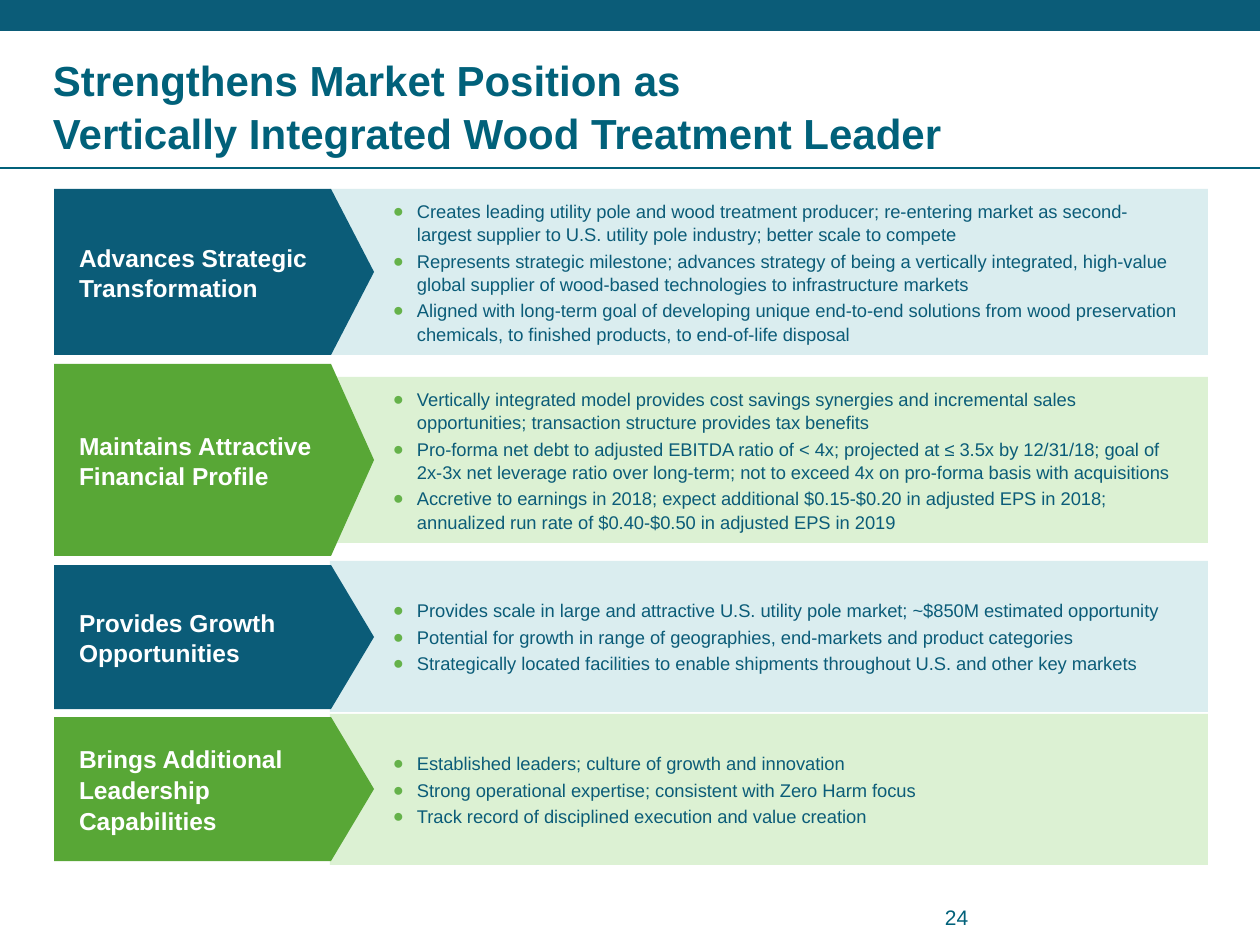
"""Build a slide of four strategic benefits, each an arrow label with a bulleted panel."""
from lxml import etree
from pptx import Presentation
from pptx import util as u
from pptx.dml.color import RGBColor
from pptx.enum import shapes, text
from pptx.oxml.ns import qn

SCALE = 914400 / 126
HUES = {"navy": "0B5C78", "teal": "01617A", "green": "58A736", "dot": "65B24A",
        "sky": "DAEDEF", "mint": "DCF1D3", "white": "FFFFFF"}
ROWS = [
    ("Advances Strategic Transformation", "navy", "sky", (189, 166), (189, 166), [
        "Creates leading utility pole and wood treatment producer; re-entering market as second-largest supplier to U.S. utility pole industry; better scale to compete",
        "Represents strategic milestone; advances strategy of being a vertically integrated, high-value global supplier of wood-based technologies to infrastructure markets",
        "Aligned with long-term goal of developing unique end-to-end solutions from wood preservation chemicals, to finished products, to end-of-life disposal"]),
    ("Maintains Attractive Financial Profile", "green", "mint", (364, 192), (377, 166), [
        "Vertically integrated model provides cost savings synergies and incremental sales opportunities; transaction structure provides tax benefits",
        "Pro-forma net debt to adjusted EBITDA ratio of < 4x; projected at ≤ 3.5x by 12/31/18; goal of 2x-3x net leverage ratio over long-term; not to exceed 4x on pro-forma basis with acquisitions",
        "Accretive to earnings in 2018; expect additional $0.15-$0.20 in adjusted EPS in 2018; annualized run rate of $0.40-$0.50 in adjusted EPS in 2019"]),
    ("Provides Growth Opportunities", "navy", "sky", (565, 144), (561, 151), [
        "Provides scale in large and attractive U.S. utility pole market; ~$850M estimated opportunity",
        "Potential for growth in range of geographies, end-markets and product categories",
        "Strategically located facilities to enable shipments throughout U.S. and other key markets"]),
    ("Brings Additional Leadership Capabilities", "green", "mint", (717, 144), (714, 151), [
        "Established leaders; culture of growth and innovation",
        "Strong operational expertise; consistent with Zero Harm focus",
        "Track record of disciplined execution and value creation"]),
]


def px(*nums):
    return [u.Emu(round(n * SCALE)) for n in nums]


def hue(name):
    return RGBColor.from_string(HUES[name])


class Deck:
    def __init__(self, slide, font="Arial", lead=1.05):
        self.slide, self.font, self.lead = slide, font, lead

    def frame(self, shape, pads, anchor):
        body = shape.text_frame
        body.word_wrap = True
        body.vertical_anchor = anchor
        (body.margin_left, body.margin_top,
         body.margin_right, body.margin_bottom) = px(*pads)
        return body

    def run(self, para, words, size, color, bold=False):
        run = para.add_run()
        run.text = words
        run.font.name, run.font.size, run.font.bold = self.font, u.Pt(size), bold
        run.font.color.rgb = hue(color)

    def shape(self, kind, box, fill):
        shape = self.slide.shapes.add_shape(kind, *px(*box))
        shape.shadow.inherit = False
        shape.fill.solid()
        shape.fill.fore_color.rgb = hue(fill)
        shape.line.fill.background()
        return shape

    def rule(self, ends, color, width):
        line = self.slide.shapes.add_connector(shapes.MSO_CONNECTOR.STRAIGHT, *px(*ends))
        line.line.color.rgb = hue(color)
        line.line.width = u.Pt(width)
        etree.SubElement(line._element.spPr, qn("a:effectLst"))

    def label(self, box, lines, size, anchor, bold=False):
        body = self.frame(self.slide.shapes.add_textbox(*px(*box)), (0, 0, 0, 0), anchor)
        para = body.paragraphs[0]
        para.line_spacing = self.lead
        for i, words in enumerate(lines):
            if i:
                para.add_line_break()
            self.run(para, words, size, "teal", bold)

    def bullet(self, para):
        props = para._p.get_or_add_pPr()
        inset = px(24)[0]
        props.set("marL", str(inset))
        props.set("indent", str(-inset))
        tint = etree.SubElement(props, qn("a:buClr"))
        etree.SubElement(tint, qn("a:srgbClr"), val=HUES["dot"])
        etree.SubElement(props, qn("a:buFont"), typeface=self.font)
        etree.SubElement(props, qn("a:buChar"), char="●")

    def panel(self, box, fill, items):
        shape = self.shape(shapes.MSO_SHAPE.RECTANGLE, box, fill)
        body = self.frame(shape, (63, 13, 25, 13), text.MSO_ANCHOR.MIDDLE)
        for i, words in enumerate(items):
            para = body.add_paragraph() if i else body.paragraphs[0]
            self.bullet(para)
            para.alignment = text.PP_ALIGN.LEFT
            para.line_spacing = self.lead
            para.space_before = u.Pt(1 if i else 0)
            para.space_after = u.Pt(1)
            self.run(para, words, 10.5, "navy")

    def arrow(self, box, fill, words, tip=43):
        shape = self.shape(shapes.MSO_SHAPE.PENTAGON, box, fill)
        shape.adjustments[0] = tip / min(box[2:])
        body = self.frame(shape, (25, 6, 13, 6), text.MSO_ANCHOR.MIDDLE)
        para = body.paragraphs[0]
        para.alignment = text.PP_ALIGN.LEFT
        para.line_spacing = self.lead
        self.run(para, words, 14, "white", True)


def main():
    show = Presentation()
    show.slide_width, show.slide_height = px(1260, 945)
    deck = Deck(show.slides.add_slide(show.slide_layouts[6]))
    deck.shape(shapes.MSO_SHAPE.RECTANGLE, (0, 0, 1260, 31), "navy")
    deck.rule((0, 168, 1260, 168), "teal", 0.75)
    deck.label((53, 45, 966, 113), ["Strengthens Market Position as",
               "Vertically Integrated Wood Treatment Leader"], 24, text.MSO_ANCHOR.BOTTOM, True)
    for head, dark, pale, (top, high), (y, tall), items in ROWS:
        deck.panel((330, y, 878, tall), pale, items)
        deck.arrow((54, top, 320, high), dark, head)
    deck.label((945, 903, 262, 32), ["24"], 12, text.MSO_ANCHOR.TOP)
    show.save("out.pptx")


if __name__ == "__main__":
    main()
